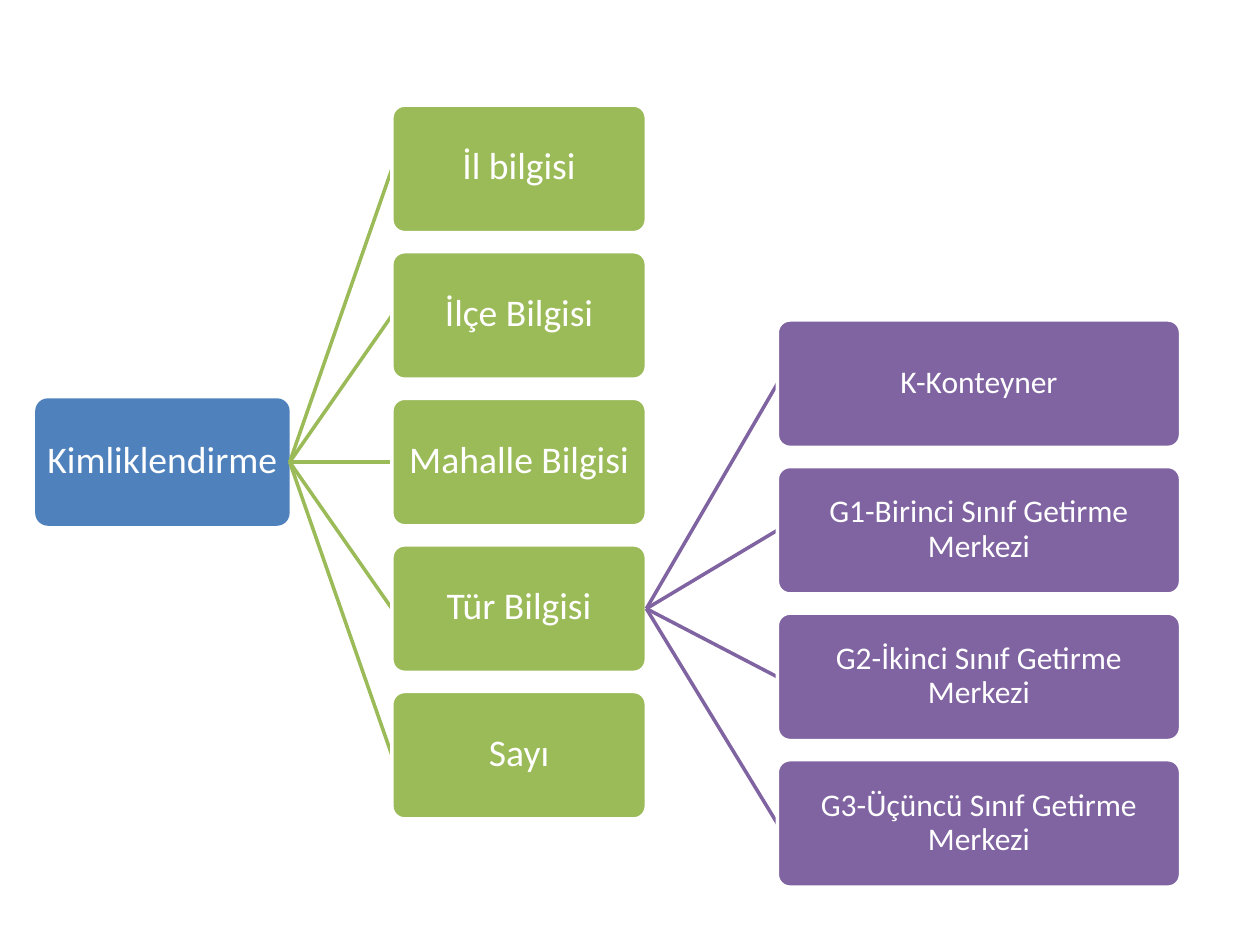
from pptx import Presentation
from pptx import util as u
from pptx.dml.color import RGBColor
from pptx.enum import shapes, text
from pptx.oxml.ns import qn
from lxml import etree

BLUE = RGBColor(0x4F, 0x81, 0xBC)
GREEN = RGBColor(0x9B, 0xBA, 0x58)
PURPLE = RGBColor(0x80, 0x63, 0xA1)
WHITE = RGBColor(0xFF, 0xFF, 0xFF)

BOX_W, BOX_H, PITCH = 5.13, 2.57, 2.955

prs = Presentation()
prs.slide_width, prs.slide_height = u.Cm(25.4), u.Cm(19.05)
s = prs.slides.add_slide(prs.slide_layouts[6])


def add_box(label, left, top, width, color, size):
    sp = s.shapes.add_shape(shapes.MSO_SHAPE.ROUNDED_RECTANGLE,
                            u.Cm(left), u.Cm(top), u.Cm(width), u.Cm(BOX_H))
    sp.adjustments[0] = 0.1
    sp.shadow.inherit = False
    sp.fill.solid()
    sp.fill.fore_color.rgb = color
    sp.line.fill.background()
    tf = sp.text_frame
    tf.word_wrap = True
    tf.vertical_anchor = text.MSO_ANCHOR.MIDDLE
    tf.margin_left = tf.margin_right = tf.margin_top = 0
    tf.margin_bottom = u.Cm(0.16)
    p = tf.paragraphs[0]
    p.text = label
    p.alignment = text.PP_ALIGN.CENTER
    p.font.name, p.font.size, p.font.color.rgb = "Calibri", u.Pt(size), WHITE
    return sp


def add_branch(parent, labels, left, top, width, color, size):
    """Stack the child boxes, each over the line that reaches it."""
    boxes = []
    for i, label in enumerate(labels):
        cx = s.shapes.add_connector(shapes.MSO_CONNECTOR.STRAIGHT, 0, 0, 0, 0)
        cx.line.color.rgb = color
        cx.line.width = u.Pt(2)
        etree.SubElement(cx._element.spPr, qn("a:effectLst"))
        sp = add_box(label, left, top + i * PITCH, width, color, size)
        sp.line.color.rgb = WHITE
        sp.line.width = u.Pt(2)
        cx.begin_connect(parent, 3)
        cx.end_connect(sp, 1)
        boxes.append(sp)
    return boxes


# Root
root = add_box("Kimliklendirme", 0.71, 8.03, BOX_W, BLUE, 21.5)

# Parts of the identity
parts = ["İl bilgisi", "İlçe Bilgisi", "Mahalle Bilgisi", "Tür Bilgisi", "Sayı"]
part_boxes = add_branch(root, parts, 7.9, 2.12, BOX_W, GREEN, 21.5)

# Kinds under "Tür Bilgisi", with tighter lines and wider side margins
kinds = ["K-Konteyner", "G1-Birinci Sınıf Getirme Merkezi",
         "G2-İkinci Sınıf Getirme Merkezi", "G3-Üçüncü Sınıf Getirme Merkezi"]
for sp in add_branch(part_boxes[3], kinds, 15.67, 6.45, 8.13, PURPLE, 18):
    tf = sp.text_frame
    tf.margin_left = tf.margin_right = u.Cm(0.4)
    tf.margin_bottom = u.Cm(0.04)
    tf.paragraphs[0].line_spacing = u.Pt(19.5)

prs.save("out.pptx")
